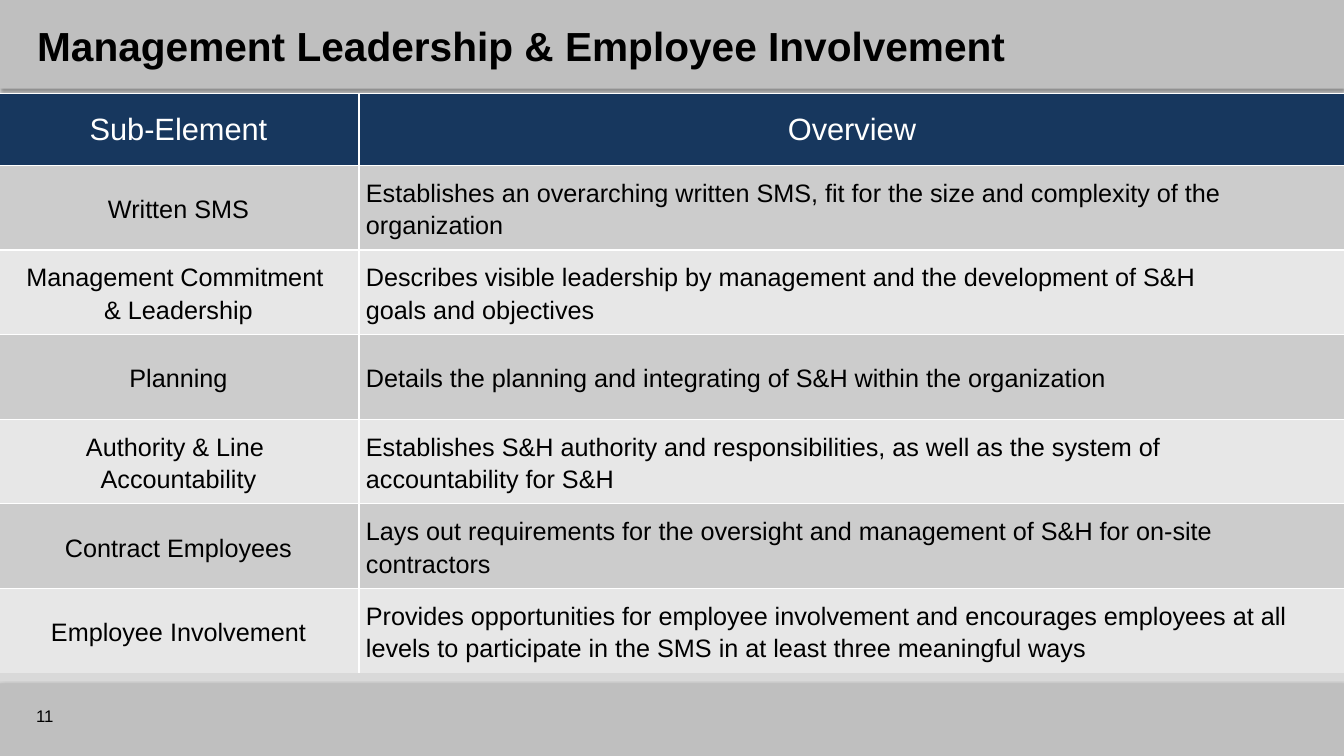
from lxml import etree
from pptx import Presentation
from pptx.dml.color import RGBColor as RGB
from pptx.enum.shapes import MSO_SHAPE as SHAPE
from pptx.enum.text import MSO_ANCHOR as ANCHOR, PP_ALIGN as ALIGN
from pptx.oxml import parse_xml
from pptx.oxml.ns import nsdecls, qn
from pptx.util import Inches, Pt

WIDE, HIGH = 13.33, 7.5
FONT = "Arial"
COLORS = {
    "back": "D9D9D9", "bar": "BFBFBF", "head": "17375E", "odd": "CCCCCC",
    "even": "E7E7E7", "ink": "000000", "white": "FFFFFF",
}
HEADS = ("Sub-Element", "Overview")
ROWS = (
    ("Written SMS",
     "Establishes an overarching written SMS, fit for the size and "
     "complexity of the organization"),
    ("Management Commitment \n& Leadership",
     "Describes visible leadership by management and the development "
     "of S&H \ngoals and objectives"),
    ("Planning",
     "Details the planning and integrating of S&H within the organization"),
    ("Authority & Line \nAccountability",
     "Establishes S&H authority and responsibilities, as well as the "
     "system of \naccountability for S&H"),
    ("Contract Employees",
     "Lays out requirements for the oversight and management of S&H for "
     "on-site contractors"),
    ("Employee Involvement",
     "Provides opportunities for employee involvement and encourages "
     "employees at all levels to participate in the SMS in at least three "
     "meaningful ways"),
)


def color(name):
    return RGB.from_string(COLORS[name])


def write(para, text, size, ink="ink", bold=False):
    """Add the text as runs, with a line break at each newline."""
    for i, line in enumerate(text.split("\n")):
        if i:
            para.add_line_break()
        run = para.add_run()
        run.text = line
        run.font.name = FONT
        run.font.size = Pt(size)
        run.font.bold = bold
        run.font.color.rgb = color(ink)


def add_bar(slide, top, height):
    """Add a full-width band with a soft shadow below it."""
    bar = slide.shapes.add_shape(
        SHAPE.RECTANGLE, 0, Inches(top), Inches(WIDE), Inches(height))
    bar.fill.solid()
    bar.fill.fore_color.rgb = color("bar")
    bar.line.fill.background()
    bar.shadow.inherit = False
    glow = bar.fill._xPr.find(qn("a:effectLst"))
    glow.append(parse_xml(
        f'<a:outerShdw {nsdecls("a")} blurRad="{Pt(3.1)}" dist="{Pt(1.8)}" '
        f'dir="5400000" rotWithShape="0"><a:srgbClr val="{COLORS["ink"]}">'
        '<a:alpha val="35000"/></a:srgbClr></a:outerShdw>'))


def add_label(slide, box, text, size, bold=False):
    label = slide.shapes.add_textbox(*map(Inches, box))
    frame = label.text_frame
    frame.word_wrap = True
    frame.vertical_anchor = ANCHOR.MIDDLE
    write(frame.paragraphs[0], text, size, bold=bold)


def set_edges(cell, shown):
    """Draw white lines on the sides named in shown and clear the others."""
    props = cell._tc.get_or_add_tcPr()
    for i, side in enumerate("LRTB"):
        edge = etree.Element(qn(f"a:ln{side}"), w=str(Pt(1)))
        if side in shown:
            fill = etree.SubElement(edge, qn("a:solidFill"))
            etree.SubElement(fill, qn("a:srgbClr"), val=COLORS["white"])
        else:
            etree.SubElement(edge, qn("a:noFill"))
        props.insert(i, edge)


def fill_cell(cell, text, row, col):
    head = row == 0
    cell.fill.solid()
    cell.fill.fore_color.rgb = color(
        "head" if head else "odd" if row % 2 else "even")
    cell.vertical_anchor = ANCHOR.MIDDLE
    para = cell.text_frame.paragraphs[0]
    para.alignment = ALIGN.CENTER if head or col == 0 else ALIGN.LEFT
    if head:
        write(para, text, 22, "white")
    else:
        cell.margin_left = cell.margin_right = Inches(0.07)
        cell.margin_top = cell.margin_bottom = 0
        para.line_spacing = 1.15
        write(para, text, 18)
    set_edges(cell, ("L" if col else "R") + "T"
              + ("B" if row < len(ROWS) else ""))


def add_grid(slide):
    data = (HEADS,) + ROWS
    widths = (3.58, 9.78)
    heights = [0.71] + [0.84] * len(ROWS)
    grid = slide.shapes.add_table(
        len(data), len(HEADS), Inches(-0.02), Inches(0.93),
        Inches(sum(widths)), Inches(sum(heights))).table
    for col, width in zip(grid.columns, widths):
        col.width = Inches(width)
    for r, (line, height) in enumerate(zip(data, heights)):
        grid.rows[r].height = Inches(height)
        for c, text in enumerate(line):
            fill_cell(grid.cell(r, c), text, r, c)


def main():
    deck = Presentation()
    deck.slide_width, deck.slide_height = Inches(WIDE), Inches(HIGH)
    slide = deck.slides.add_slide(deck.slide_layouts[6])
    slide.background.fill.solid()
    slide.background.fill.fore_color.rgb = color("back")
    add_bar(slide, 6.78, 0.72)
    add_bar(slide, 0, 0.88)
    add_label(slide, (0.27, 0.14, 12.93, 0.62),
              "Management Leadership & Employee Involvement", 29, bold=True)
    add_label(slide, (0.26, 6.9, 1, 0.4), "11", 12)
    add_grid(slide)
    deck.save("out.pptx")


if __name__ == "__main__":
    main()
